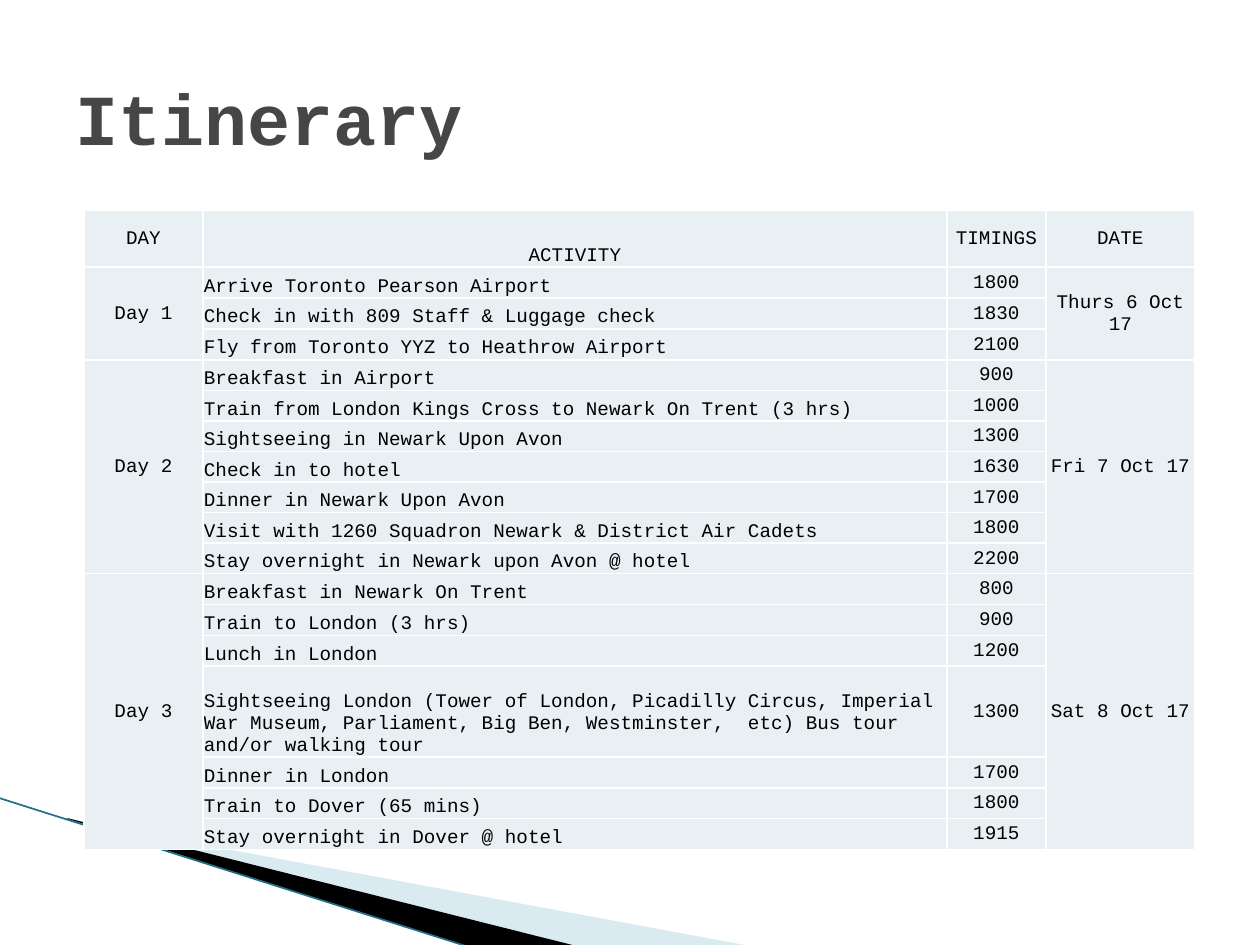
from pptx import Presentation
from pptx.dml.color import RGBColor
from pptx.enum.shapes import MSO_CONNECTOR as Link
from pptx.enum.text import MSO_ANCHOR as Anchor, PP_ALIGN as Align
from pptx.util import Pt
from lxml.etree import SubElement
from pptx.oxml.ns import qn

SCALE = 914400 / 126
FONT = "Courier New"
BLACK = RGBColor(0x00, 0x00, 0x00)
GREY = RGBColor(0x46, 0x46, 0x46)
PALE = RGBColor(0xE8, 0xF0, 0xF4)
SKY = RGBColor(0xA0, 0xCB, 0xDC)
TEAL = RGBColor(0x1F, 0x6F, 0x85)

HEADS = ["DAY", "ACTIVITY", "TIMINGS", "DATE"]
WIDTHS = [119, 744, 99, 149]
HEAD_H = 57
TALL = 91
LONG = ("Sightseeing London (Tower of London, Picadilly Circus, Imperial War Museum, "
        "Parliament, Big Ben, Westminster,  etc) Bus tour and/or walking tour")
DAYS = [
    ("Day 1", "Thurs 6 Oct 17", 93, [
        ("Arrive Toronto Pearson Airport", "1800"),
        ("Check in with 809 Staff & Luggage check", "1830"),
        ("Fly from Toronto YYZ to Heathrow Airport", "2100"),
    ]),
    ("Day 2", "Fri 7 Oct 17", 214, [
        ("Breakfast in Airport", "900"),
        ("Train from London Kings Cross to Newark On Trent (3 hrs)", "1000"),
        ("Sightseeing in Newark Upon Avon", "1300"),
        ("Check in to hotel", "1630"),
        ("Dinner in Newark Upon Avon", "1700"),
        ("Visit with 1260 Squadron Newark & District Air Cadets", "1800"),
        ("Stay overnight in Newark upon Avon @ hotel", "2200"),
    ]),
    ("Day 3", "Sat 8 Oct 17", 276, [
        ("Breakfast in Newark On Trent", "800"),
        ("Train to London (3 hrs)", "900"),
        ("Lunch in London", "1200"),
        (LONG, "1300"),
        ("Dinner in London", "1700"),
        ("Train to Dover (65 mins)", "1800"),
        ("Stay overnight in Dover @ hotel", "1915"),
    ]),
]


def px(n):
    return round(n * SCALE)


def write(frame, text, size, color, bold=False, align=Align.LEFT):
    para = frame.paragraphs[0]
    para.alignment = align
    run = para.add_run()
    run.text = text
    font = run.font
    font.name, font.size, font.bold = FONT, Pt(size), bold
    font.color.rgb = color


def add_wedge(slide, points, color, alpha=None):
    pen = slide.shapes.build_freeform(*points[0], scale=SCALE)
    pen.add_line_segments(points[1:], close=True)
    shape = pen.convert_to_shape()
    shape.shadow.inherit = False
    shape.fill.solid()
    shape.fill.fore_color.rgb = color
    shape.line.fill.background()
    if alpha:
        tint = shape.fill._xPr.find(qn("a:solidFill"))[0]
        SubElement(tint, qn("a:alpha"), val=str(alpha * 1000))


def add_line(slide, start, end):
    line = slide.shapes.add_connector(Link.STRAIGHT, *map(px, start + end))
    line.line.color.rgb = TEAL
    line.line.width = Pt(0.95)
    SubElement(line._element.spPr, qn("a:effectLst"))


def add_title(slide, text):
    box = slide.shapes.add_textbox(px(63), px(38), px(1134), px(157))
    frame = box.text_frame
    frame.word_wrap = True
    frame.vertical_anchor = Anchor.MIDDLE
    write(frame, text, 41, GREY, bold=True)


def style_cell(cell, anchor):
    cell.vertical_anchor = anchor
    cell.margin_left = cell.margin_right = cell.margin_top = px(1)
    cell.margin_bottom = 0
    props = cell._tc.get_or_add_tcPr()
    for side in ("lnL", "lnR", "lnT", "lnB"):
        edge = SubElement(props, qn(f"a:{side}"), w=str(Pt(1)))
        fill = SubElement(edge, qn("a:solidFill"))
        SubElement(fill, qn("a:srgbClr"), val="FFFFFF")
    cell.fill.solid()
    cell.fill.fore_color.rgb = PALE


def put(cell, text, align=Align.CENTER):
    write(cell.text_frame, text, 11, BLACK, align=align)


def add_plan(slide):
    count = 1 + sum(len(day[3]) for day in DAYS)
    total = HEAD_H + sum(day[2] for day in DAYS)
    table = slide.shapes.add_table(
        count, len(WIDTHS), px(84), px(210), px(sum(WIDTHS)), px(total)).table
    table.first_row = table.horz_banding = False
    for col, width in zip(table.columns, WIDTHS):
        col.width = px(width)
    for row in table.rows:
        for col, cell in enumerate(row.cells):
            style_cell(cell, Anchor.BOTTOM if col == 1 else Anchor.MIDDLE)
    table.rows[0].height = px(HEAD_H)
    for col, head in enumerate(HEADS):
        put(table.cell(0, col), head)
    top = 1
    for name, date, height, items in DAYS:
        tall = sum(act == LONG for act, _ in items)
        step = (height - tall * TALL) / (len(items) - tall)
        for row, (act, time) in enumerate(items, top):
            table.rows[row].height = px(TALL if act == LONG else step)
            put(table.cell(row, 1), act, Align.LEFT)
            put(table.cell(row, 2), time)
        for col, text in ((0, name), (3, date)):
            table.cell(top, col).merge(table.cell(top + len(items) - 1, col))
            put(table.cell(top, col), text)
        top += len(items)


def main():
    deck = Presentation()
    deck.slide_width, deck.slide_height = px(1260), px(945)
    slide = deck.slides.add_slide(deck.slide_layouts[6])
    add_wedge(slide, [(69, 820), (750, 946), (575, 946), (69, 819)], SKY, 40)
    add_wedge(slide, [(67, 818), (576, 946), (469, 947), (68, 819)], BLACK)
    add_line(slide, (-1, 798), (469, 947))
    add_plan(slide)
    add_title(slide, "Itinerary")
    deck.save("out.pptx")


if __name__ == "__main__":
    main()
